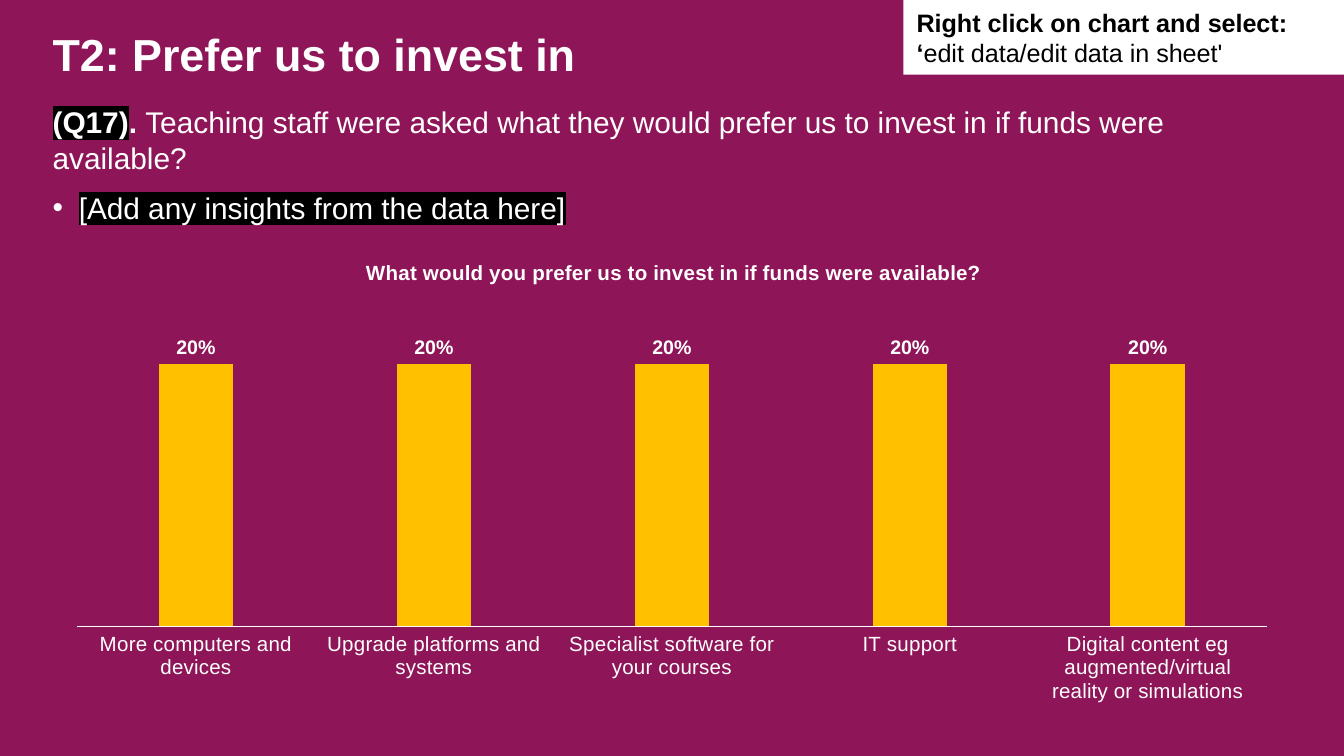
import pptx
import pptx.util
import pptx.chart.data
import pptx.dml.color
import pptx.enum.chart
import pptx.enum.shapes
import pptx.enum.text
import pptx.oxml
import pptx.oxml.ns
from lxml import etree

Pt = pptx.util.Pt
qn = pptx.oxml.ns.qn
COLORS = {"plum": "8E1558", "gold": "FFC000", "white": "FFFFFF", "black": "000000"}
RGB = {name: pptx.dml.color.RGBColor.from_string(h) for name, h in COLORS.items()}


def add_run(p, text, size=16, color="white", bold=False, highlight=None):
    r = p.add_run()
    r.text = text
    r.font.size = Pt(size)
    r.font.bold = bold
    r.font.color.rgb = RGB[color]
    if highlight:
        mark = etree.SubElement(r.font._element, qn("a:highlight"))
        etree.SubElement(mark, qn("a:srgbClr"), val=COLORS[highlight])
    r.font.name = "Arial"
    return r


def set_layout(element, x, y, w=None, h=None):
    """Place a chart title or plot area by fractions of the chart size."""
    for old in element.findall(qn("c:layout")):
        element.remove(old)
    layout = etree.Element(qn("c:layout"))
    manual = etree.SubElement(layout, qn("c:manualLayout"))
    values = {"xMode": "edge", "yMode": "edge", "x": x, "y": y, "w": w, "h": h}
    if w:
        values = {"layoutTarget": "inner", **values}
    for tag, value in values.items():
        if value is not None:
            etree.SubElement(manual, qn(f"c:{tag}"), val=str(value))
    text = element.find(qn("c:tx"))
    element.insert(0 if text is None else 1, layout)


prs = pptx.Presentation()
prs.slide_width, prs.slide_height = Pt(720), Pt(405)
s = prs.slides.add_slide(prs.slide_layouts[6])
s.background.fill.solid()
s.background.fill.fore_color.rgb = RGB["plum"]

# Title and body
frames = []
for top, width, height in [(14.5, 438, 27), (55.5, 660, 58)]:
    tf = s.shapes.add_textbox(Pt(28.2), Pt(top), Pt(width), Pt(height)).text_frame
    tf.word_wrap = True
    tf.margin_left = tf.margin_top = tf.margin_right = tf.margin_bottom = 0
    frames.append(tf)
title, body = frames
add_run(title.paragraphs[0], "T2: Prefer us to invest in", size=24, bold=True)

p = body.paragraphs[0]
add_run(p, "(Q17)", bold=True, highlight="black")
add_run(p, ". ", bold=True)
add_run(p, "Teaching staff were asked what they would prefer us to invest in if funds were available?")

p = body.add_paragraph()
p.space_before = Pt(7.5)
pPr = p._p.get_or_add_pPr()
pPr.set("marL", str(Pt(14)))
pPr.set("indent", str(Pt(-14)))
etree.SubElement(pPr, qn("a:buFont"), typeface="Arial")
etree.SubElement(pPr, qn("a:buChar"), char="•")
add_run(p, "[Add any insights from the data here]", highlight="black")

# Chart
data = pptx.chart.data.CategoryChartData(number_format="0%")
data.categories = [
    "More computers and devices",
    "Upgrade platforms and systems",
    "Specialist software for your courses",
    "IT support",
    "Digital content eg augmented/virtual reality or simulations",
]
data.add_series("Series 1", [0.2] * 5)
chart = s.shapes.add_chart(
    pptx.enum.chart.XL_CHART_TYPE.COLUMN_CLUSTERED,
    Pt(28), Pt(126.5), Pt(664), Pt(255), data,
).chart
chart.has_legend = False
chart.font.name = "Arial"
chart.font.size = Pt(10)
chart.has_title = True
add_run(chart.chart_title.text_frame.paragraphs[0],
        "What would you prefer us to invest in if funds were available?", size=11, bold=True)
set_layout(chart.chart_title._element, 0.25, 0.04)
set_layout(chart._chartSpace.chart.plotArea, 0.02, 0.13, 0.96, 0.69)

axis = chart.category_axis
axis.major_tick_mark = pptx.enum.chart.XL_TICK_MARK.NONE
axis.format.line.color.rgb = RGB["white"]
axis.format.line.width = Pt(0.75)
axis.tick_labels.font.size = Pt(11)
axis.tick_labels.font.name = "Arial"
axis.tick_labels.font.color.rgb = RGB["white"]
values = chart.value_axis
values.visible = False
values.has_major_gridlines = False
values.minimum_scale, values.maximum_scale = 0, 0.25

plot = chart.plots[0]
plot.gap_width, plot.overlap = 219, -27
plot.vary_by_categories = False
bars = plot.series[0]
bars.format.fill.solid()
bars.format.fill.fore_color.rgb = RGB["gold"]
labels = bars.data_labels
labels.show_value = True
labels.number_format, labels.number_format_is_linked = "0%", False
labels.position = pptx.enum.chart.XL_LABEL_POSITION.OUTSIDE_END
labels.font.size = Pt(10.5)
labels.font.bold = True
labels.font.name = "Arial"
labels.font.color.rgb = RGB["white"]

# Editing hint
sp = s.shapes.add_shape(pptx.enum.shapes.MSO_SHAPE.RECTANGLE, Pt(484), 0, Pt(236), Pt(40))
sp.shadow.inherit = False
sp.fill.solid()
sp.fill.fore_color.rgb = RGB["white"]
sp.line.fill.background()
tf = sp.text_frame
tf.word_wrap = True
tf.vertical_anchor = pptx.enum.text.MSO_ANCHOR.MIDDLE
p = tf.paragraphs[0]
p.alignment = pptx.enum.text.PP_ALIGN.LEFT
add_run(p, "Right click on chart and select: ‘", size=13.5, color="black", bold=True)
add_run(p, "edit data/edit data in sheet'", size=13.5, color="black")

prs.save("out.pptx")
